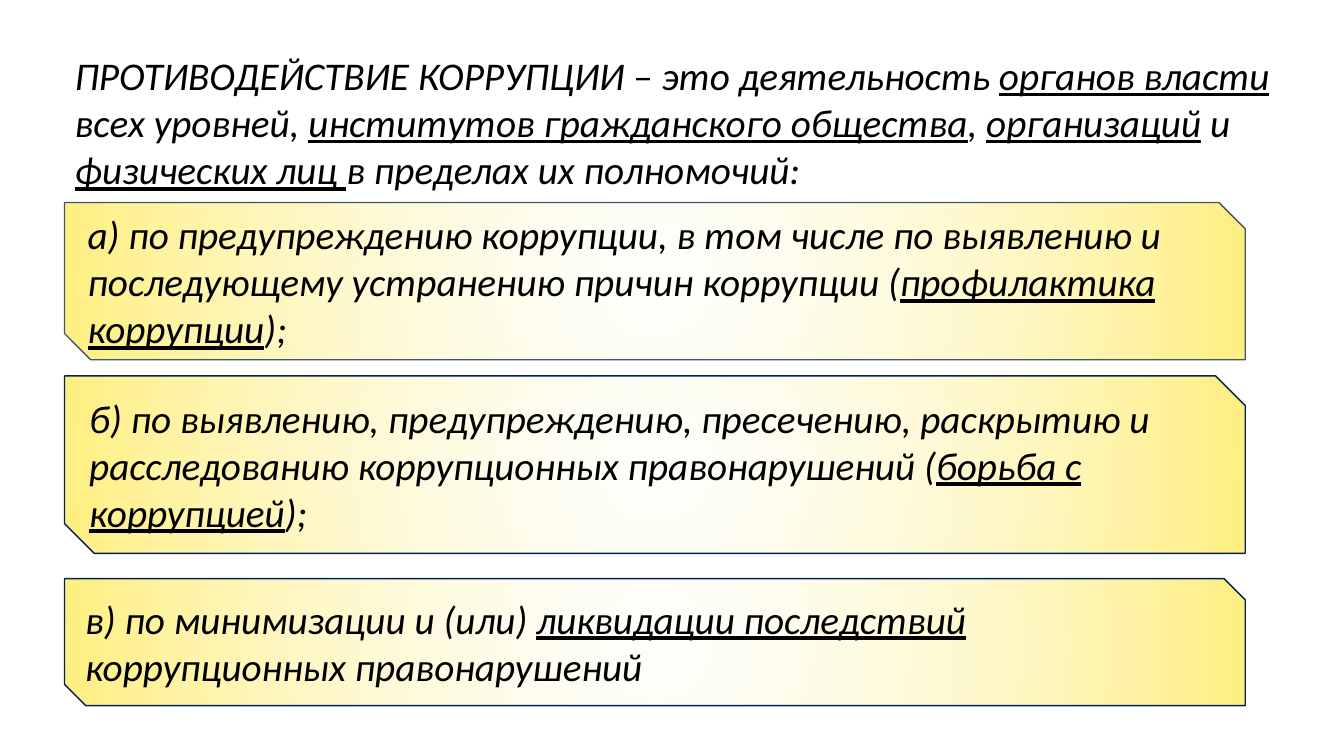
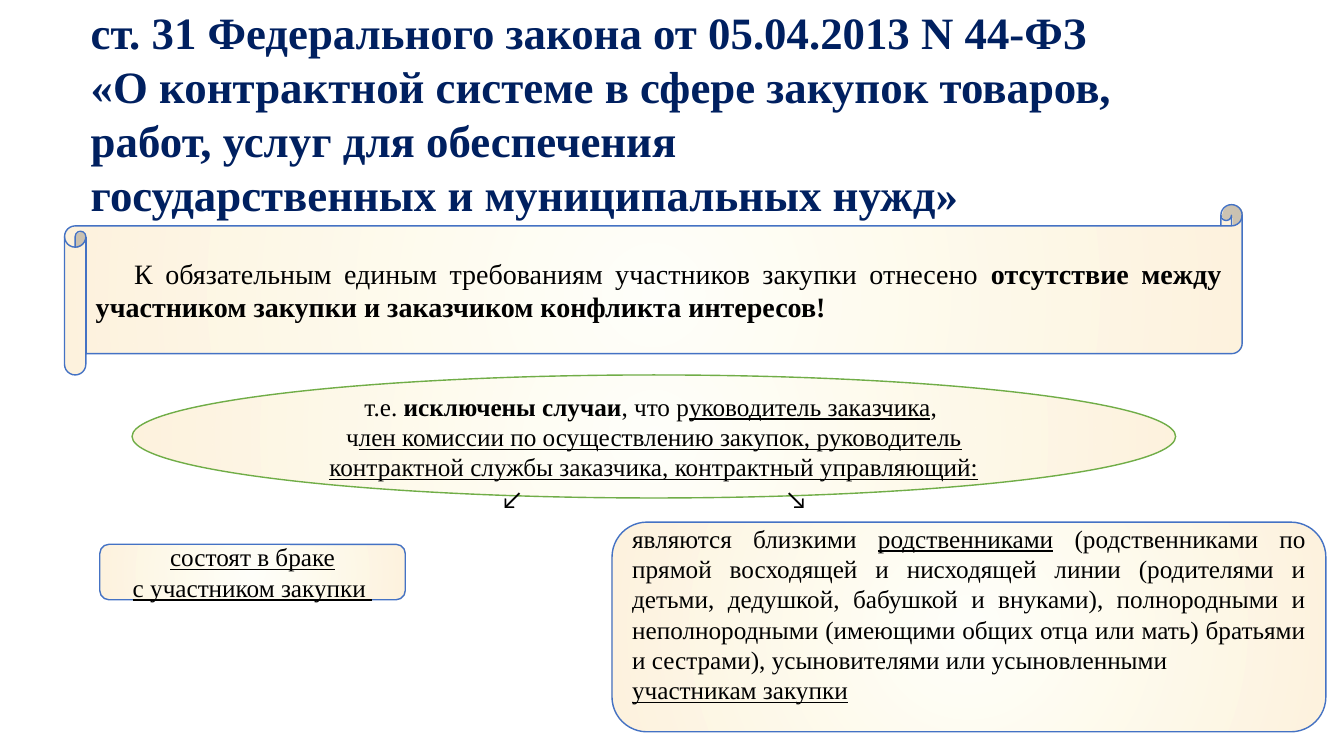
from lxml import etree
from pptx import Presentation
from pptx.dml.color import RGBColor
from pptx.enum import shapes, text
from pptx.oxml import ns
from pptx.util import Inches, Pt

COLORS = {
    "ink": "000000", "navy": "002060", "slate": "44546A", "blue": "4472C4",
    "green": "70AD47", "center": "FFFBDD", "yellow": "FFF081", "cream": "FEF3DE",
}
SHAPE = shapes.MSO_SHAPE
LEFT, CENTER, JUSTIFY = (
    text.PP_ALIGN.LEFT, text.PP_ALIGN.CENTER, text.PP_ALIGN.JUSTIFY)
TOP, MIDDLE = text.MSO_ANCHOR.TOP, text.MSO_ANCHOR.MIDDLE
INDENT = 0.38

DEFINITION = {"size": 28, "name": "Calibri", "italic": True}
LAW_TITLE = {"size": 32, "name": "Times New Roman", "bold": True, "color": "navy"}
CLAUSE = {"size": 20, "name": "Times New Roman"}
DETAIL = {"size": 18, "name": "Times New Roman"}
ARROW = {"size": 18, "name": "Calibri"}


def under(words):
    return words, {"underline": True}


def strong(words):
    return words, {"bold": True}


# A paragraph is a list of runs; a run is plain text or text with its own format.
LEAD = [[
    "ПРОТИВОДЕЙСТВИЕ КОРРУПЦИИ – это деятельность ", under("органов власти "),
    "всех уровней, ", under("институтов гражданского общества"), ", ",
    under("организаций"), " и ", under("физических лиц "),
    "в пределах их полномочий:",
]]
MEASURES = [  # top, height, line colour, runs
    (2.01, 1.56, "slate", [
        "а) по предупреждению коррупции, в том числе по выявлению и последующему "
        "устранению причин коррупции (", under("профилактика коррупции"), ");"]),
    (3.73, 1.76, "navy", [
        "б) по выявлению, предупреждению, пресечению, раскрытию и расследованию "
        "коррупционных правонарушений (", under("борьба с коррупцией"), ");"]),
    (5.74, 1.26, "navy", [
        "в) по минимизации и (или) ", under("ликвидации последствий "),
        "коррупционных правонарушений"]),
]

LAW = [
    ["ст. 31 Федерального закона от 05.04.2013 N 44-ФЗ"],
    ["«О контрактной системе в сфере закупок товаров,"],
    ["работ, услуг для обеспечения"],
    ["государственных и муниципальных нужд»"],
]
REQUIREMENT = [[
    "К обязательным единым требованиям участников закупки отнесено",
    strong(" отсутствие между участником закупки и заказчиком конфликта интересов!"),
]]
EXCLUDED = [
    ["т.е. ", strong("исключены случаи"), ", что р",
     under("уководитель заказчика"), ", "],
    ["ч", under("лен комиссии по осуществлению закупок, руководитель контрактной "
                "службы заказчика, контрактный управляющий:")],
]
MARRIED = [[under("состоят в браке")], [under("с участником закупки ")]]
RELATIVES = [
    ["являются близкими ", under("родственниками"),
     " (родственниками по прямой восходящей и нисходящей линии (родителями и "
     "детьми, дедушкой, бабушкой и внуками), полнородными и неполнородными "
     "(имеющими общих отца или мать) братьями и сестрами), усыновителями или "
     "усыновленными"],
    [under("участникам закупки")],
]
LAW_SHAPES = [  # preset, place, line colour, paragraphs, font, layout
    (SHAPE.HORIZONTAL_SCROLL, (0.64, 2.03, 11.68, 1.69), "blue", REQUIREMENT,
     CLAUSE, {"align": JUSTIFY, "indent": INDENT}),
    (SHAPE.OVAL, (1.31, 3.72, 10.35, 1.22), "green", EXCLUDED,
     DETAIL, {"align": CENTER}),
    (SHAPE.ROUNDED_RECTANGLE, (0.99, 5.4, 3.03, 0.55), "blue", MARRIED,
     DETAIL, {"align": CENTER}),
    (SHAPE.ROUNDED_RECTANGLE, (6.07, 5.18, 7.08, 2.08), "blue", RELATIVES,
     DETAIL, {"align": JUSTIFY, "bottom": 0.31}),
]
ARROWS = [("↙", 5.07), ("↘", 7.89)]
ARROW_TOP, ARROW_WIDTH, ARROW_HEIGHT = 4.79, 0.4, 0.3


def rgb(name):
    return RGBColor.from_string(COLORS[name])


def place(shape, box):
    for side, length in zip(("left", "top", "width", "height"), box):
        setattr(shape, side, Inches(length))


def write(shape, paras, font, align=LEFT, anchor=MIDDLE, indent=0, bottom=0.05):
    frame = shape.text_frame
    layout = {"word_wrap": True, "auto_size": text.MSO_AUTO_SIZE.NONE,
              "vertical_anchor": anchor, "margin_left": Inches(0.1),
              "margin_right": Inches(0.1), "margin_top": Inches(0.05),
              "margin_bottom": Inches(bottom)}
    for key, value in layout.items():
        setattr(frame, key, value)
    for number, runs in enumerate(paras):
        para = frame.add_paragraph() if number else frame.paragraphs[0]
        para.alignment, para.line_spacing = align, 1.0
        if indent:
            para._p.get_or_add_pPr().set("indent", str(Inches(indent)))
        for run in runs:
            words, extra = (run, {}) if isinstance(run, str) else run
            span = para.add_run()
            span.text = words
            look = {"color": "ink", **font, **extra}
            span.font.color.rgb = rgb(look.pop("color"))
            look["size"] = Pt(look["size"])
            for key, value in look.items():
                setattr(span.font, key, value)


def glow(shape, edge):
    """Fill from a pale, nearly clear centre out to the edge colour."""
    shape.fill.background()
    props = shape.element.spPr
    gradient = etree.fromstring(
        f'<a:gradFill {ns.nsdecls("a")} rotWithShape="1"><a:gsLst>'
        f'<a:gs pos="0"><a:srgbClr val="{COLORS["center"]}">'
        '<a:alpha val="13000"/></a:srgbClr></a:gs>'
        f'<a:gs pos="100000"><a:srgbClr val="{COLORS[edge]}"/></a:gs></a:gsLst>'
        '<a:path path="circle">'
        '<a:fillToRect l="50000" t="50000" r="50000" b="50000"/></a:path>'
        '</a:gradFill>')
    props.replace(props.find(ns.qn("a:noFill")), gradient)


def add_panel(page, preset, box, edge, line, paras, font, **layout):
    panel = page.shapes.add_shape(preset, *map(Inches, box))
    panel.shadow.inherit = False
    glow(panel, edge)
    panel.line.color.rgb = rgb(line)
    panel.line.width = Pt(1)
    write(panel, paras, font, **layout)


def add_page(deck, box, paras, font, **layout):
    """Add a title-only page with its title set."""
    page = deck.slides.add_slide(deck.slide_layouts[5])
    place(page.shapes.title, box)
    write(page.shapes.title, paras, font, anchor=TOP, **layout)
    return page


def main():
    deck = Presentation()
    deck.slide_width, deck.slide_height = Inches(13.33), Inches(7.5)

    page = add_page(deck, (0.64, 0.46, 12.21, 1.5), LEAD, DEFINITION)
    for top, height, line, runs in MEASURES:
        add_panel(page, SHAPE.SNIP_2_DIAG_RECTANGLE, (0.64, top, 11.71, height),
                  "yellow", line, [runs], DEFINITION)

    page = add_page(deck, (0.42, 0, 12.88, 2.2), LAW, LAW_TITLE,
                    align=JUSTIFY, indent=INDENT)
    for preset, box, line, paras, font, layout in LAW_SHAPES:
        add_panel(page, preset, box, "cream", line, paras, font, **layout)
    for arrow, middle in ARROWS:
        box = (middle - ARROW_WIDTH / 2, ARROW_TOP, ARROW_WIDTH, ARROW_HEIGHT)
        label = page.shapes.add_textbox(*map(Inches, box))
        write(label, [[arrow]], ARROW, align=CENTER)

    deck.save("out.pptx")


if __name__ == "__main__":
    main()
